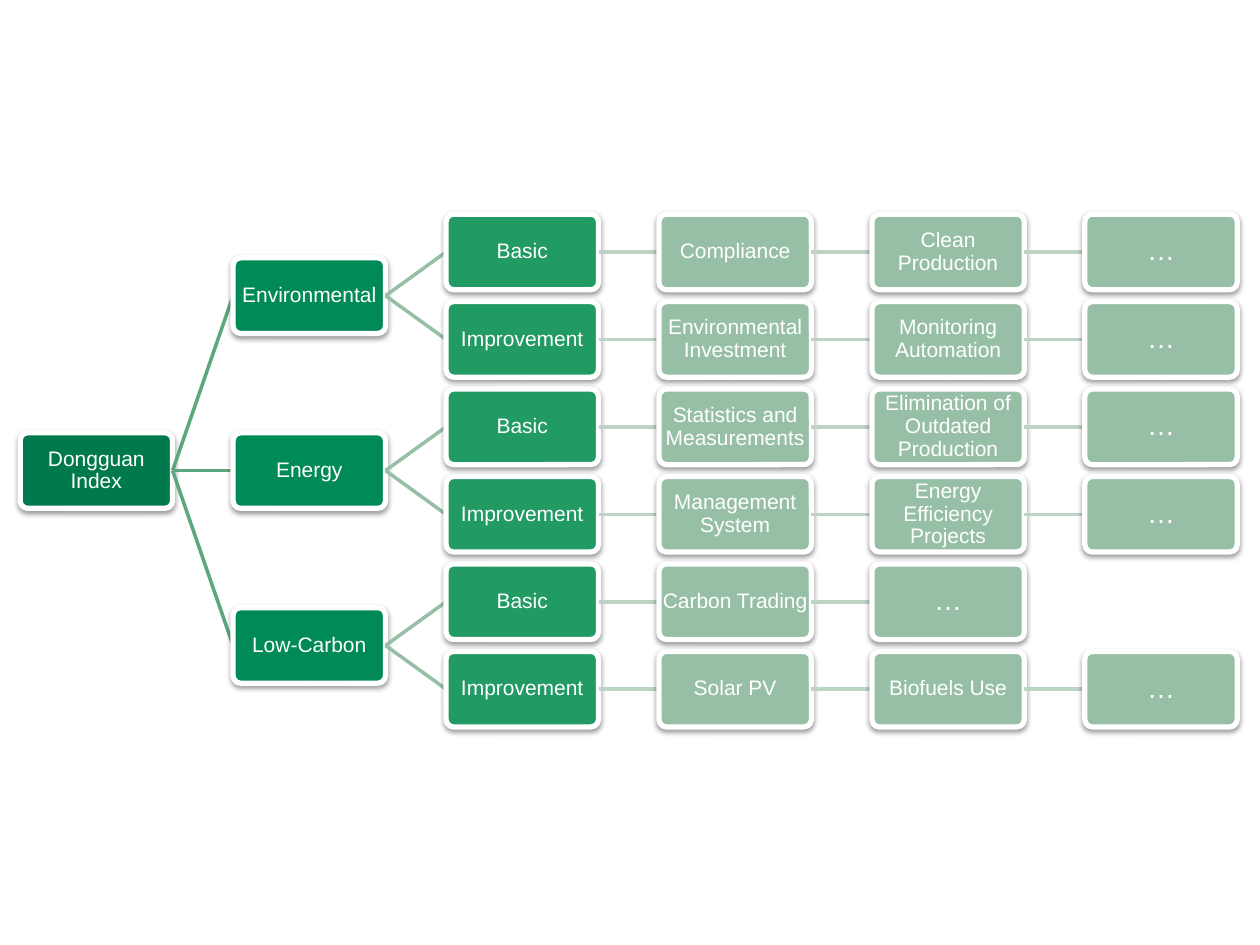
from lxml import etree
from pptx import Presentation
from pptx.dml.color import RGBColor
from pptx.enum import shapes, text
from pptx.oxml import ns
from pptx.util import Inches, Pt

WHITE = RGBColor(0xFF, 0xFF, 0xFF)
ROOT_GREEN = RGBColor(0x00, 0x7A, 0x4C)
BRANCH_GREEN = RGBColor(0x00, 0x8A, 0x56)
LEVEL_GREEN = RGBColor(0x22, 0x9A, 0x63)
MEASURE_GREEN = RGBColor(0x97, 0xBF, 0xA6)
BRANCH_LINE = RGBColor(0x5E, 0xA6, 0x7D)
MEASURE_LINE = RGBColor(0xBD, 0xD4, 0xC5)

# Grid: columns by left edge, rows by centre line
LEFT, COLUMN_PITCH = 0.16, 1.69
TOP_ROW, ROW_PITCH = 2.0, 0.694
BOX_W, BOX_H = 1.21, 0.6

SHADOW = (
    f'<a:effectLst {ns.nsdecls("a")}>'
    f'<a:outerShdw blurRad="{Pt(3.1)}" dist="{Pt(1.6)}" dir="5400000" rotWithShape="0">'
    '<a:srgbClr val="000000"><a:alpha val="38000"/></a:srgbClr>'
    '</a:outerShdw></a:effectLst>'
)

INDEX = {
    "Environmental": {
        "Basic": ["Compliance", "Clean Production", "…"],
        "Improvement": ["Environmental Investment", "Monitoring Automation", "…"],
    },
    "Energy": {
        "Basic": ["Statistics and Measurements", "Elimination of Outdated Production", "…"],
        "Improvement": ["Management System", "Energy Efficiency Projects", "…"],
    },
    "Low-Carbon": {
        "Basic": ["Carbon Trading", "…"],
        "Improvement": ["Solar PV", "Biofuels Use", "…"],
    },
}

prs = Presentation()
prs.slide_width, prs.slide_height = Inches(10), Inches(7.5)
slide = prs.slides.add_slide(prs.slide_layouts[6])


def add_node(label, column, row, color):
    node = slide.shapes.add_shape(
        shapes.MSO_SHAPE.ROUNDED_RECTANGLE,
        Inches(LEFT + column * COLUMN_PITCH),
        Inches(TOP_ROW + row * ROW_PITCH - BOX_H / 2),
        Inches(BOX_W), Inches(BOX_H))
    node.adjustments[0] = 0.1
    node.fill.solid()
    node.fill.fore_color.rgb = color
    node.line.color.rgb = WHITE
    node.line.width = Pt(3)
    node._element.spPr.append(etree.fromstring(SHADOW))
    frame = node.text_frame
    frame.text = label
    frame.word_wrap = True
    frame.vertical_anchor = text.MSO_ANCHOR.MIDDLE
    frame.margin_left = frame.margin_right = 0
    frame.margin_top = frame.margin_bottom = 0
    paragraph = frame.paragraphs[0]
    paragraph.alignment = text.PP_ALIGN.CENTER
    paragraph.line_spacing = 0.9
    font = paragraph.runs[0].font
    font.name = "Arial"
    font.size = Pt(16 if label == "…" else 12)
    font.color.rgb = WHITE


def add_link(column, from_row, to_row, color):
    """Join a node in the previous column to one in this column."""
    end = LEFT + column * COLUMN_PITCH
    link = slide.shapes.add_connector(
        shapes.MSO_CONNECTOR.STRAIGHT,
        Inches(end - COLUMN_PITCH + BOX_W), Inches(TOP_ROW + from_row * ROW_PITCH),
        Inches(end), Inches(TOP_ROW + to_row * ROW_PITCH))
    link.line.color.rgb = color
    link.line.width = Pt(2)
    etree.SubElement(link._element.spPr, ns.qn("a:effectLst"))


# Root
ROOT_ROW = 2.5
add_node("Dongguan Index", 0, ROOT_ROW, ROOT_GREEN)

# Branches, each centred on its two levels
for b, (branch, levels) in enumerate(INDEX.items()):
    branch_row = 2 * b + 0.5
    add_link(1, ROOT_ROW, branch_row, BRANCH_LINE)
    add_node(branch, 1, branch_row, BRANCH_GREEN)

    # Levels, each followed by its chain of measures
    for row, (level, measures) in enumerate(levels.items(), start=2 * b):
        add_link(2, branch_row, row, MEASURE_GREEN)
        add_node(level, 2, row, LEVEL_GREEN)
        for column, measure in enumerate(measures, start=3):
            add_link(column, row, row, MEASURE_LINE)
            add_node(measure, column, row, MEASURE_GREEN)

prs.save("out.pptx")
